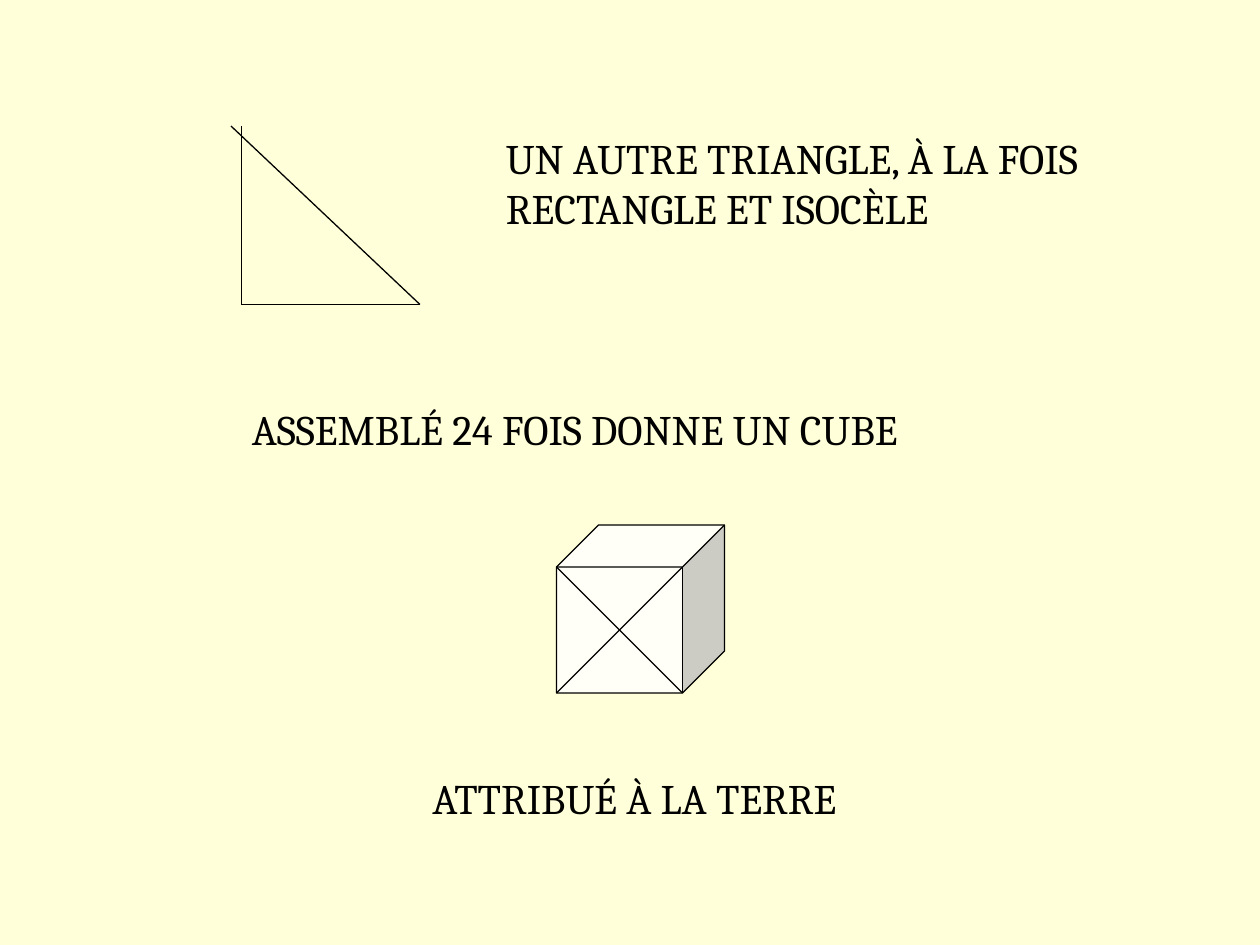
from pptx import Presentation
from pptx.dml.color import RGBColor
from pptx.enum.shapes import MSO_CONNECTOR, MSO_SHAPE
from pptx.oxml.ns import qn
from pptx.util import Inches, Pt
from lxml.etree import SubElement

COLORS = {"background": "FFFFD9", "ink": "000000", "cube": "FFFFF7"}
FONT = "Cambria"
COLUMNS, ROWS = 120, 90  # grid of twelfths of an inch


def color(name):
    return RGBColor.from_string(COLORS[name])


def grid(units):
    return Inches(units / 12)


def style_line(line):
    line.color.rgb = color("ink")
    line.width = Pt(0.75)


def add_line(slide, start, end):
    segment = slide.shapes.add_connector(
        MSO_CONNECTOR.STRAIGHT, *map(grid, (*start, *end)))
    style_line(segment.line)
    SubElement(segment._element.spPr, qn("a:effectLst"))


def add_caption(slide, left, top, width, height, lines):
    caption = slide.shapes.add_textbox(*map(grid, (left, top, width, height)))
    frame = caption.text_frame
    frame.word_wrap = True
    frame.text = "\n".join(lines)
    for paragraph in frame.paragraphs:
        paragraph.font.name = FONT
        paragraph.font.size = Pt(24)
        paragraph.font.color.rgb = color("ink")


def add_cube(slide, left, top, size):
    depth = size / 4
    cube = slide.shapes.add_shape(
        MSO_SHAPE.CUBE, *map(grid, (left, top, size, size)))
    cube.adjustments[0] = 0.25
    cube.shadow.inherit = False
    cube.fill.solid()
    cube.fill.fore_color.rgb = color("cube")
    style_line(cube.line)

    # Diagonals of the front face
    right, bottom = left + size - depth, top + size
    front_top = top + depth
    add_line(slide, (left, front_top), (right, bottom))
    add_line(slide, (left, bottom), (right, front_top))


def main():
    presentation = Presentation()
    presentation.slide_width = grid(COLUMNS)
    presentation.slide_height = grid(ROWS)
    slide = presentation.slides.add_slide(presentation.slide_layouts[6])
    slide.background.fill.solid()
    slide.background.fill.fore_color.rgb = color("background")

    # Right-angled triangle, its long side overshooting the upright
    right_angle, far_corner = (23, 29), (40, 29)
    add_line(slide, (23, 12), right_angle)
    add_line(slide, right_angle, far_corner)
    add_line(slide, far_corner, (22, 12))
    add_caption(slide, 47, 12, 64.4, 10.8,
                ["UN AUTRE TRIANGLE, À LA FOIS", "RECTANGLE ET ISOCÈLE"])

    # Cube made of the triangles
    add_caption(slide, 22.8, 37.8, 71.4, 6, ["ASSEMBLÉ 24 FOIS DONNE UN CUBE"])
    add_cube(slide, 53, 50, 16)
    add_caption(slide, 40, 73, 46, 6, ["ATTRIBUÉ À LA TERRE"])

    presentation.save("out.pptx")


if __name__ == "__main__":
    main()
